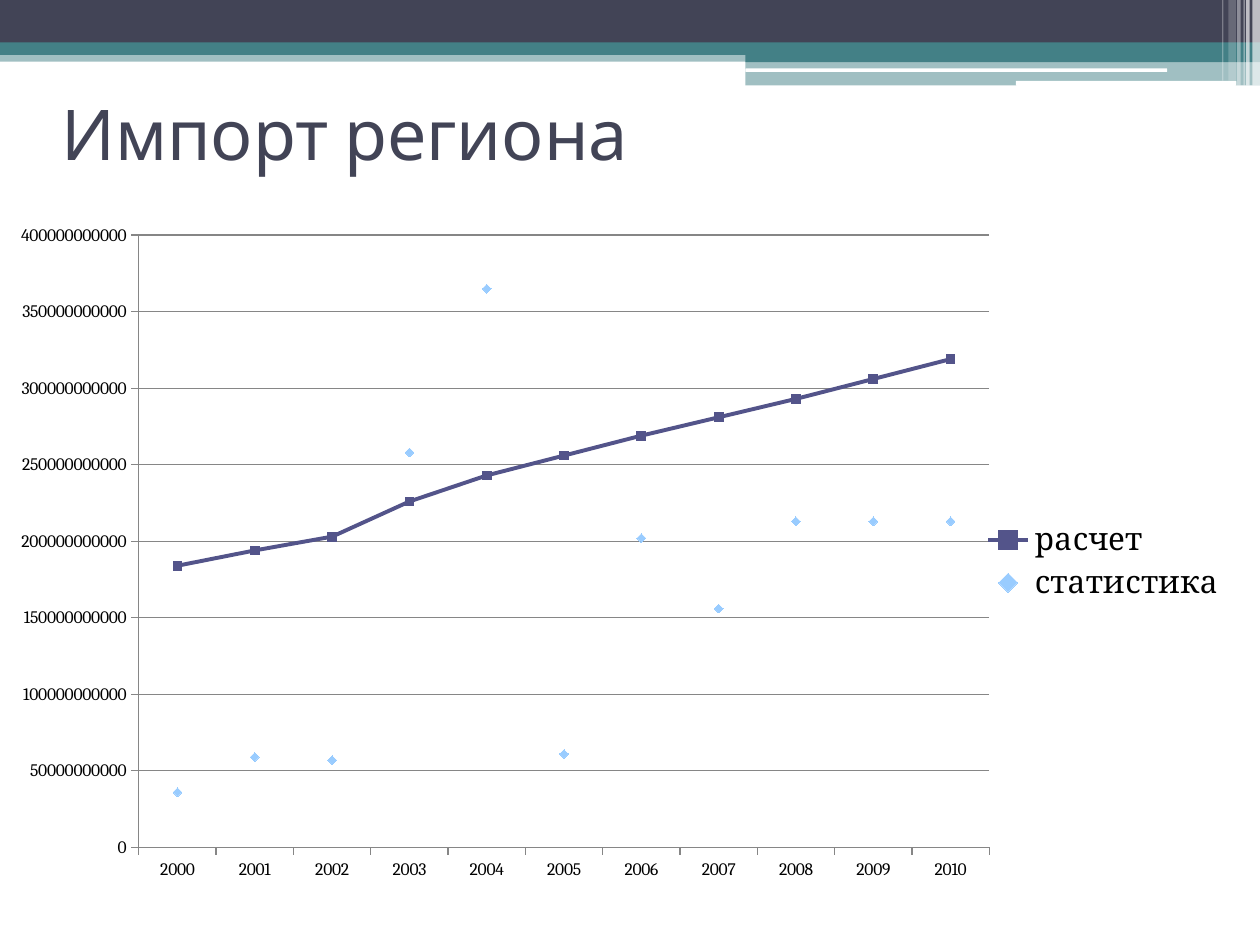
from dataclasses import dataclass

from lxml.etree import SubElement
from pptx import Presentation
from pptx.chart.data import CategoryChartData
from pptx.dml.color import RGBColor
from pptx.enum.chart import XL_CHART_TYPE, XL_LEGEND_POSITION, XL_MARKER_STYLE, XL_TICK_MARK
from pptx.enum.shapes import MSO_SHAPE
from pptx.enum.text import MSO_ANCHOR
from pptx.oxml import parse_xml
from pptx.oxml.ns import nsdecls, qn
from pptx.util import Pt


@dataclass(frozen=True)
class Theme:
    """Colours, fonts and type sizes of the slide."""
    dark: RGBColor = RGBColor(0x42, 0x44, 0x56)
    teal: RGBColor = RGBColor(0x43, 0x80, 0x86)
    white: RGBColor = RGBColor(0xFF, 0xFF, 0xFF)
    black: RGBColor = RGBColor(0, 0, 0)
    grid: RGBColor = RGBColor(0x86, 0x86, 0x86)
    estimate: RGBColor = RGBColor(0x53, 0x54, 0x8A)
    statistics: RGBColor = RGBColor(0x99, 0xCC, 0xFF)
    title_font: str = "Cabin"
    chart_font: str = "Cambria"
    title_size: int = 40
    axis_size: int = 10
    legend_size: int = 18


THEME = Theme()
BILLION = 10 ** 9
YEARS = [str(year) for year in range(2000, 2011)]
ESTIMATE = [184, 194, 203, 226, 243, 256, 269, 281, 293, 306, 319]
STATISTICS = [36, 59, 57, 258, 365, 61, 202, 156, 213, 213, 213]


def add_bar(slide, box, color, opacity=100, kind=MSO_SHAPE.RECTANGLE):
    """Add a borderless bar with the given opacity in percent."""
    bar = slide.shapes.add_shape(kind, *map(Pt, box))
    bar.shadow.inherit = False
    bar.line.fill.background()
    bar.fill.solid()
    bar.fill.fore_color.rgb = color
    if opacity < 100:
        tint = bar.fill._xPr.find(qn("a:solidFill"))[0]
        SubElement(tint, qn("a:alpha")).set("val", str(opacity * 1000))
    return bar


def add_header(slide, left, top, width, height):
    """Draw the layered bands and the fading stripes at the right edge."""
    step = left + 426
    right = left + width
    bands = [
        (left, 28.8, width, 6.5, THEME.teal, 50),
        (left, 0, width, 24.5, THEME.dark, 100),
        (left, 24.2, width, 7.2, THEME.teal, 100),
        (step, 28, right - step, 7.5, THEME.teal, 100),
        (step, 35.3, right - step, 13.5, THEME.teal, 50),
    ]
    for x, y, band_width, band_height, color, opacity in bands:
        add_bar(slide, (x, top + y, band_width, band_height), color, opacity)
    for x, y, slot_width, slot_height in [(step, 39.1, 241, 2), (left + 580.5, 46.2, 126, 2.8)]:
        add_bar(slide, (x, top + y, slot_width, slot_height), THEME.white,
                kind=MSO_SHAPE.ROUNDED_RECTANGLE)
    stripes = [(4.3, 4.3, 0, 65), (7.9, 2, 0, 65), (9.4, 0.7, 0, 60),
               (13, 2, 0, 40), (18, 4.3, 2.9, 20), (21.6, 0.7, 2.9, 30)]
    for offset, stripe_width, gap, opacity in stripes:
        add_bar(slide, (right - offset, top, stripe_width, height - gap), THEME.white, opacity)


def add_title(slide, left, top, width, height):
    """Place the slide title, centred vertically in its box."""
    frame = slide.shapes.add_textbox(*map(Pt, (left, top, width, height))).text_frame
    frame.word_wrap = True
    frame.vertical_anchor = MSO_ANCHOR.MIDDLE
    frame.text = "Импорт региона"
    font = frame.paragraphs[0].runs[0].font
    font.name, font.size = THEME.title_font, Pt(THEME.title_size)
    font.color.rgb = THEME.dark


def set_layout(parent, index, fractions, inner=False):
    """Fix a chart part at fractions of the chart area."""
    for old in parent.findall(qn("c:layout")):
        parent.remove(old)
    layout = parse_xml(f"<c:layout {nsdecls('c')}><c:manualLayout/></c:layout>")
    settings = [("layoutTarget", "inner")] if inner else []
    settings += [("xMode", "edge"), ("yMode", "edge"), *zip("xywh", fractions)]
    for tag, value in settings:
        SubElement(layout[0], qn(f"c:{tag}")).set("val", str(value))
    parent.insert(index, layout)


def style_font(font, size):
    """Apply the chart typeface at the given size."""
    font.name, font.size = THEME.chart_font, Pt(size)
    font.color.rgb = THEME.black


def style_axis(axis):
    """Give an axis thin grey lines and outside ticks."""
    axis.major_tick_mark = XL_TICK_MARK.OUTSIDE
    axis.minor_tick_mark = XL_TICK_MARK.NONE
    axis.format.line.color.rgb = THEME.grid
    axis.format.line.width = Pt(0.75)
    style_font(axis.tick_labels.font, THEME.axis_size)


def style_series(series, color, marker_style, line_width=None):
    """Colour a series, drawing its line only when a width is given."""
    series.smooth = False
    if line_width:
        series.format.line.color.rgb = color
        series.format.line.width = Pt(line_width)
    else:
        series.format.line.fill.background()
    marker = series.marker
    marker.style, marker.size = marker_style, 5
    marker.format.fill.solid()
    marker.format.fill.fore_color.rgb = color
    marker.format.line.fill.background()


def add_import_chart(slide, left, top, width, height):
    """Chart estimated imports as a line and statistics as points."""
    data = CategoryChartData(number_format="0")
    data.categories = YEARS
    for name, billions in [("расчет", ESTIMATE), ("статистика", STATISTICS)]:
        data.add_series(name, [value * BILLION for value in billions])
    chart = slide.shapes.add_chart(
        XL_CHART_TYPE.LINE_MARKERS, *map(Pt, (left, top, width, height)), data).chart
    chart.has_title = False
    style_font(chart.font, THEME.axis_size)

    plot = chart.plots[0]
    plot.vary_by_categories = False
    estimate, statistics = plot.series
    style_series(estimate, THEME.estimate, XL_MARKER_STYLE.SQUARE, 2.25)
    style_series(statistics, THEME.statistics, XL_MARKER_STYLE.DIAMOND)

    amounts = chart.value_axis
    style_axis(chart.category_axis)
    style_axis(amounts)
    amounts.minimum_scale, amounts.maximum_scale = 0, 400 * BILLION
    amounts.major_unit = 50 * BILLION
    amounts.has_major_gridlines = True
    amounts.major_gridlines.format.line.color.rgb = THEME.grid
    amounts.major_gridlines.format.line.width = Pt(0.75)

    chart.has_legend = True
    legend = chart.legend
    legend.position = XL_LEGEND_POSITION.RIGHT
    legend.include_in_layout = False
    style_font(legend.font, THEME.legend_size)
    set_layout(legend._element, 1, (0.79, 0.44, 0.2, 0.12))
    set_layout(chart._chartSpace.chart.plotArea, 0, (0.112, 0.075, 0.686, 0.798), inner=True)


def main():
    """Build the slide and save it."""
    deck = Presentation()
    deck.slide_width, deck.slide_height = Pt(720), Pt(540)
    slide = deck.slides.add_slide(deck.slide_layouts[6])
    add_header(slide, 0, 0, 720, 49)
    add_title(slide, 28, 34, 648, 84)
    add_import_chart(slide, 0, 101.5, 708.5, 438.5)
    deck.save("out.pptx")


if __name__ == "__main__":
    main()
